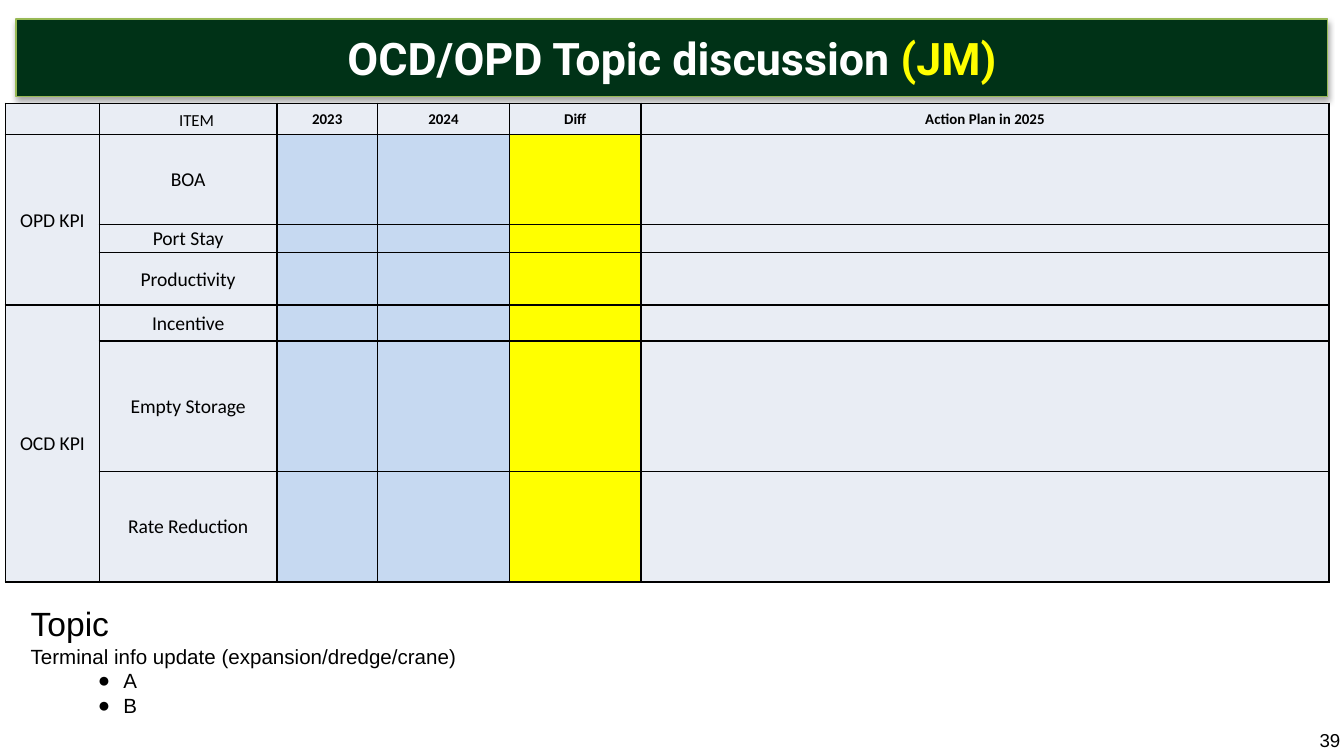
from lxml import etree
from pptx import Presentation
from pptx.dml.color import RGBColor
from pptx.enum import shapes, text
from pptx.oxml import parse_xml
from pptx.oxml.ns import nsdecls, qn
from pptx.util import Inches, Pt

BLACK = RGBColor(0x00, 0x00, 0x00)
WHITE = RGBColor(0xFF, 0xFF, 0xFF)
YELLOW = RGBColor(0xFF, 0xFF, 0x00)
DARK_GREEN = RGBColor(0x00, 0x32, 0x17)
LIGHT_GREEN = RGBColor(0x98, 0xB9, 0x55)
PALE = RGBColor(0xE9, 0xED, 0xF4)
BLUE = RGBColor(0xC6, 0xD9, 0xF1)

HEADERS = ["", "　ITEM", "2023", "2024", "Diff", "Action Plan in 2025"]
GROUPS = {
    "OPD KPI": ["BOA", "Port Stay", "Productivity"],
    "OCD KPI": ["Incentive", "Empty Storage", "Rate Reduction"],
}
BODY_FILLS = [PALE, PALE, BLUE, BLUE, YELLOW, PALE]
COLUMN_WIDTHS = [0.7, 1.32, 0.75, 0.98, 0.98, 5.12]
ROW_HEIGHTS = [0.23, 0.67, 0.21, 0.39, 0.27, 0.97, 0.82]


def style(para, name, size, bold=False, color=BLACK):
    font = para.font
    font.name, font.size, font.bold = name, Pt(size), bold
    font.color.rgb = color


def add_banner(page):
    box = page.shapes.add_shape(shapes.MSO_SHAPE.RECTANGLE, Inches(0.12),
                                Inches(0.14), Inches(9.76), Inches(0.58))
    box.fill.solid()
    box.fill.fore_color.rgb = DARK_GREEN
    box.line.color.rgb = LIGHT_GREEN
    box.line.width = Pt(0.75)

    # Soft shadow straight below
    box.shadow.inherit = False
    effects = box._element.spPr.find(qn("a:effectLst"))
    effects.append(parse_xml(
        f'<a:outerShdw {nsdecls("a")} blurRad="{Pt(3.1)}" dist="{Pt(1.8)}" '
        'dir="5400000" rotWithShape="0"><a:srgbClr val="000000">'
        '<a:alpha val="35000"/></a:srgbClr></a:outerShdw>'))

    frame = box.text_frame
    frame.margin_left = frame.margin_right = 0
    frame.margin_top = frame.margin_bottom = 0
    frame.vertical_anchor = text.MSO_ANCHOR.MIDDLE
    para = frame.paragraphs[0]
    para.alignment = text.PP_ALIGN.CENTER
    style(para, "Roboto", 24, True, WHITE)
    for words, color in [("OCD/OPD Topic discussion ", WHITE), ("(JM)", YELLOW)]:
        span = para.add_run()
        span.text = words
        span.font.color.rgb = color


def add_borders(cell):
    properties = cell._tc.get_or_add_tcPr()
    for index, side in enumerate(["lnL", "lnR", "lnT", "lnB"]):
        properties.insert(index, parse_xml(
            f'<a:{side} {nsdecls("a")} w="{Pt(1)}"><a:solidFill>'
            f'<a:srgbClr val="{BLACK}"/></a:solidFill></a:{side}>'))


def fill_cell(cell, words, fill, size, bold=False):
    cell.fill.solid()
    cell.fill.fore_color.rgb = fill
    add_borders(cell)
    cell.margin_left = cell.margin_right = cell.margin_top = Inches(0.01)
    cell.margin_bottom = 0
    cell.vertical_anchor = text.MSO_ANCHOR.MIDDLE
    para = cell.text_frame.paragraphs[0]
    para.alignment = text.PP_ALIGN.CENTER
    style(para, "Calibri", size, bold)
    if words:
        para.add_run().text = words
    else:
        # Keeps an empty cell from stretching its row
        para._p.get_or_add_endParaRPr().set("sz", "800")


def add_kpi_table(page):
    table = page.shapes.add_table(
        len(ROW_HEIGHTS), len(COLUMN_WIDTHS), Inches(0.04), Inches(0.77),
        Inches(sum(COLUMN_WIDTHS)), Inches(sum(ROW_HEIGHTS))).table
    table.first_row = table.horz_banding = False
    for column, width in zip(table.columns, COLUMN_WIDTHS):
        column.width = Inches(width)
    for row, height in zip(table.rows, ROW_HEIGHTS):
        row.height = Inches(height)

    # Header row
    for index, words in enumerate(HEADERS):
        item = index == 1
        fill_cell(table.cell(0, index), words, PALE, 9 if item else 8, not item)

    # Groups of indicators, each under one merged cell
    top = 1
    for group, items in GROUPS.items():
        for offset, item in enumerate(items):
            row = [group if offset == 0 else "", item, "", "", "", ""]
            for index, (words, fill) in enumerate(zip(row, BODY_FILLS)):
                fill_cell(table.cell(top + offset, index), words, fill, 10.5)
        table.cell(top, 0).merge(table.cell(top + len(items) - 1, 0))
        top += len(items)


def add_text(page, left, top, width, height, lines):
    box = page.shapes.add_textbox(Inches(left), Inches(top),
                                  Inches(width), Inches(height))
    frame = box.text_frame
    frame.word_wrap = True
    for index, (words, size, bullet) in enumerate(lines):
        para = frame.add_paragraph() if index else frame.paragraphs[0]
        para.add_run().text = words
        style(para, "Arial", size)
        if bullet:
            para.level = 1
            properties = para._p.get_or_add_pPr()
            properties.set("marL", str(Inches(0.69)))
            properties.set("indent", str(Inches(-0.19)))
            properties.insert(0, etree.Element(qn("a:buFont"), typeface="Arial"))
            properties.insert(1, etree.Element(qn("a:buChar"), char="●"))
    return frame


def main():
    deck = Presentation()
    # Widescreen, 16 to 9
    deck.slide_width, deck.slide_height = Inches(10), Inches(10 * 9 / 16)
    page = deck.slides.add_slide(deck.slide_layouts[6])

    add_banner(page)
    add_kpi_table(page)

    # Page number
    number = add_text(page, 9.72, 5.39, 0.64, 0.23, [("39", 10, False)])
    number.vertical_anchor = text.MSO_ANCHOR.MIDDLE

    # Topic notes
    notes = add_text(page, 0.13, 4.44, 9.76, 1.33, [
        ("Topic", 18, False),
        ("Terminal info update (expansion/dredge/crane)", 11, False),
        ("A", 11, True),
        ("B", 11, True),
    ])
    notes.auto_size = text.MSO_AUTO_SIZE.SHAPE_TO_FIT_TEXT
    deck.save("out.pptx")


if __name__ == "__main__":
    main()
